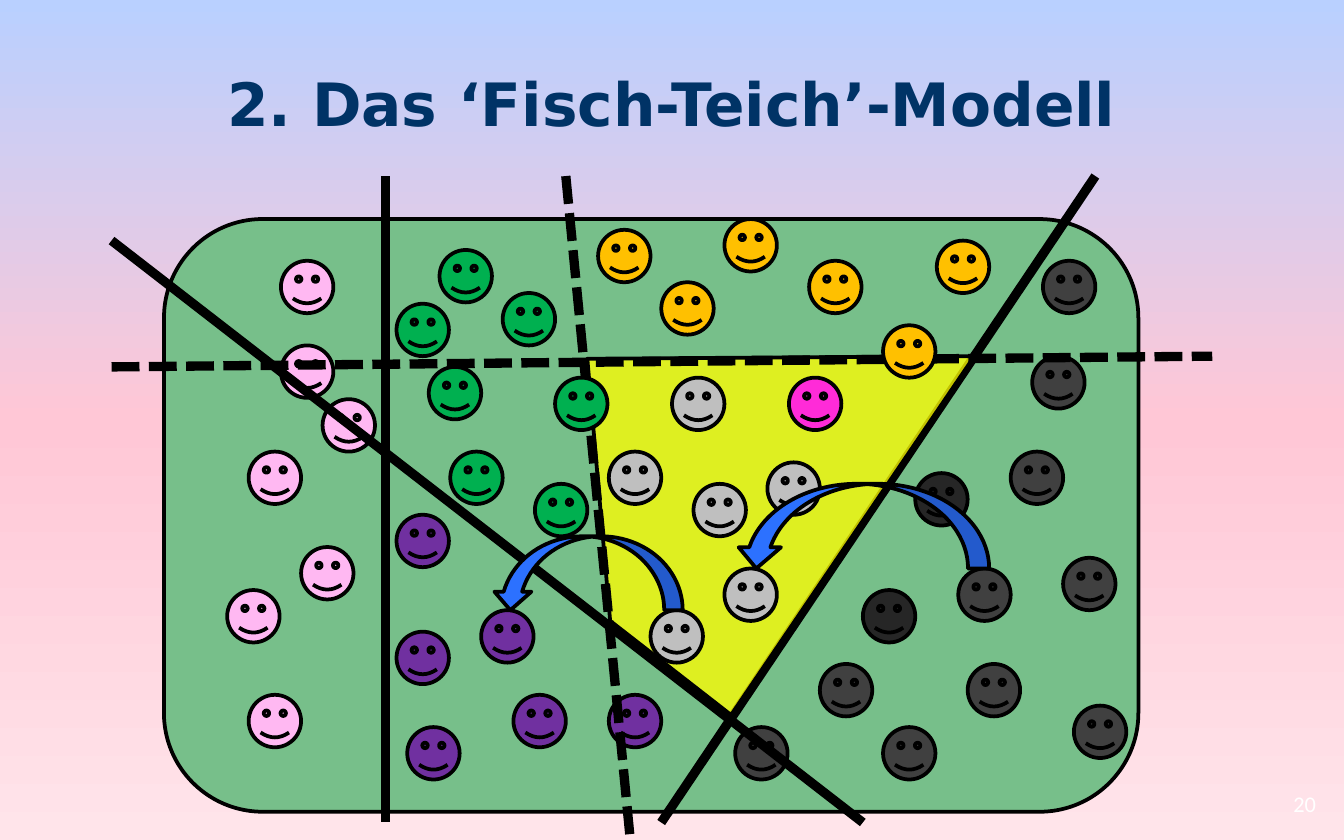
import copy
from dataclasses import dataclass

import pptx
import pptx.dml.color
import pptx.enum.dml
import pptx.enum.shapes
import pptx.enum.text
import pptx.oxml
import pptx.oxml.ns
import pptx.util

Inches = pptx.util.Inches
Shape = pptx.enum.shapes.MSO_SHAPE
Align = pptx.enum.text.PP_ALIGN


@dataclass(frozen=True)
class Theme:
    backdrop: tuple = ((0, "B9D0FF"), (0.5, "FFC7D6"), (1, "FFE4EA"))
    title: str = "003366"
    number: str = "FFFFFF"
    ink: str = "000000"
    pond: str = "77BF8A"
    overlap: str = "FFFF00"
    overlap_opacity: int = 76
    arrow: str = "2C71FF"
    pink: str = "FFB8F2"
    green: str = "00B050"
    orange: str = "FFC000"
    purple: str = "7030A0"
    dark: str = "404040"
    darkest: str = "262626"
    grey: str = "BFBFBF"
    magenta: str = "FF2BD8"
    font: str = "DejaVu Sans"
    title_size: int = 32
    number_size: int = 12
    outline: int = 2
    divider: int = 5
    fish: float = 0.39


def rgb(color):
    return pptx.dml.color.RGBColor.from_string(color)


class PondSlide:
    def __init__(self, page, theme):
        self.page = page
        self.theme = theme

    def background(self):
        fill = self.page.background.fill
        fill.gradient()
        fill.gradient_angle = 270
        stop_list = self.page._element.xpath(".//p:bg//a:gsLst")[0]
        stop_list.insert(1, copy.deepcopy(stop_list[0]))
        for stop, (position, color) in zip(fill.gradient_stops, self.theme.backdrop):
            stop.position = position
            stop.color.rgb = rgb(color)

    def text(self, words, left, top, width, height, size, color, align, font=None, bold=False):
        box = self.page.shapes.add_textbox(*map(Inches, (left, top, width, height)))
        frame = box.text_frame
        frame.word_wrap = True
        frame.vertical_anchor = pptx.enum.text.MSO_ANCHOR.MIDDLE
        para = frame.paragraphs[0]
        para.text = words
        para.alignment = align
        para.font.size = pptx.util.Pt(size)
        para.font.color.rgb = rgb(color)
        para.font.bold = bold
        if font:
            para.font.name = font

    def paint(self, shape, color):
        shape.shadow.inherit = False
        shape.fill.solid()
        shape.fill.fore_color.rgb = rgb(color)
        shape.line.color.rgb = rgb(self.theme.ink)
        shape.line.width = pptx.util.Pt(self.theme.outline)
        return shape

    def shape(self, kind, left, top, width, height, color):
        shape = self.page.shapes.add_shape(kind, *map(Inches, (left, top, width, height)))
        return self.paint(shape, color)

    def school(self, color, places):
        for left, top in places:
            self.shape(Shape.SMILEY_FACE, left, top, self.theme.fish, self.theme.fish, color)

    def leap(self, left, top, width, height):
        arrow = self.shape(Shape.CURVED_DOWN_ARROW, left, top, width, height, self.theme.arrow)
        arrow._element.spPr.xfrm.set("flipH", "1")

    def area(self, points, color, opacity):
        corners = [(Inches(x), Inches(y)) for x, y in points]
        builder = self.page.shapes.build_freeform(*corners[0])
        builder.add_line_segments(corners[1:], close=True)
        shape = self.paint(builder.convert_to_shape(), color)
        tone = shape._element.spPr.xpath("./a:solidFill/a:srgbClr")[0]
        alpha = pptx.oxml.parse_xml(
            f'<a:alpha {pptx.oxml.ns.nsdecls("a")} val="{opacity * 1000}"/>')
        tone.append(alpha)

    def divider(self, start, end, dashed=False):
        line = self.page.shapes.add_connector(
            pptx.enum.shapes.MSO_CONNECTOR.STRAIGHT, *map(Inches, (*start, *end)))
        line.line.color.rgb = rgb(self.theme.ink)
        line.line.width = pptx.util.Pt(self.theme.divider)
        if dashed:
            line.line.dash_style = pptx.enum.dml.MSO_LINE.SQUARE_DOT
        line._element.spPr.append(
            pptx.oxml.parse_xml(f'<a:effectLst {pptx.oxml.ns.nsdecls("a")}/>'))


def main():
    theme = Theme()
    deck = pptx.Presentation()
    deck.slide_width, deck.slide_height = Inches(10), Inches(6.25)
    slide = PondSlide(deck.slides.add_slide(deck.slide_layouts[6]), theme)

    # Background, title and page number
    slide.background()
    slide.text("2. Das ‘Fisch-Teich’-Modell", 0.75, 0.45, 8.5, 0.63, theme.title_size,
               theme.title, Align.CENTER, theme.font, bold=True)
    slide.text("20", 9.2, 5.8, 0.69, 0.35, theme.number_size, theme.number, Align.RIGHT)

    # Pond and the fish outside the overlap
    slide.shape(Shape.ROUNDED_RECTANGLE, 1.22, 1.63, 7.25, 4.41, theme.pond)
    slide.school(theme.pink, [(2.09, 1.94), (2.09, 2.57), (2.4, 2.97), (1.85, 3.36),
                              (1.69, 4.39), (1.85, 5.17), (2.24, 4.07)])
    slide.school(theme.green, [(2.95, 2.26), (3.27, 1.86), (3.74, 2.18), (3.19, 2.73),
                               (3.35, 3.36), (3.98, 3.6)])
    slide.school(theme.orange, [(4.45, 1.71), (5.39, 1.63), (6.02, 1.94), (4.92, 2.1),
                                (6.97, 1.79)])
    slide.school(theme.purple, [(3.58, 4.54), (3.03, 5.41), (3.82, 5.17), (4.53, 5.17),
                                (2.95, 4.7), (2.95, 3.83)])
    slide.school(theme.darkest, [(6.81, 3.52), (6.42, 4.39)])
    slide.school(theme.dark, [(7.52, 3.36), (7.68, 2.65), (7.91, 4.15), (7.13, 4.23),
                              (5.47, 5.41), (6.1, 4.94), (7.2, 4.94), (6.57, 5.41),
                              (7.99, 5.25), (7.76, 1.94)])

    # Dividers around the overlap
    slide.divider((2.87, 1.31), (2.87, 6.12))
    slide.divider((8.15, 1.31), (4.92, 6.12))
    slide.area([(4.37, 2.67), (7.25, 2.65), (5.44, 5.32), (4.54, 4.62)],
               theme.overlap, theme.overlap_opacity)
    slide.divider((0.83, 1.79), (6.42, 6.12))
    slide.divider((0.83, 2.73), (9.02, 2.65), dashed=True)

    # Fish inside the overlap
    slide.school(theme.grey, [(4.53, 3.36), (4.84, 4.54), (5.16, 3.6), (5, 2.81),
                              (5.71, 3.44), (5.39, 4.23)])
    slide.school(theme.magenta, [(5.87, 2.81)])

    # Fish changing area, and those lying on a divider
    slide.leap(5.47, 3.6, 1.89, 0.63)
    slide.leap(3.66, 3.99, 1.42, 0.55)
    slide.school(theme.orange, [(6.57, 2.42)])
    slide.divider((4.21, 1.31), (4.69, 6.25), dashed=True)
    slide.school(theme.green, [(4.13, 2.81)])

    deck.save("out.pptx")


if __name__ == "__main__":
    main()
